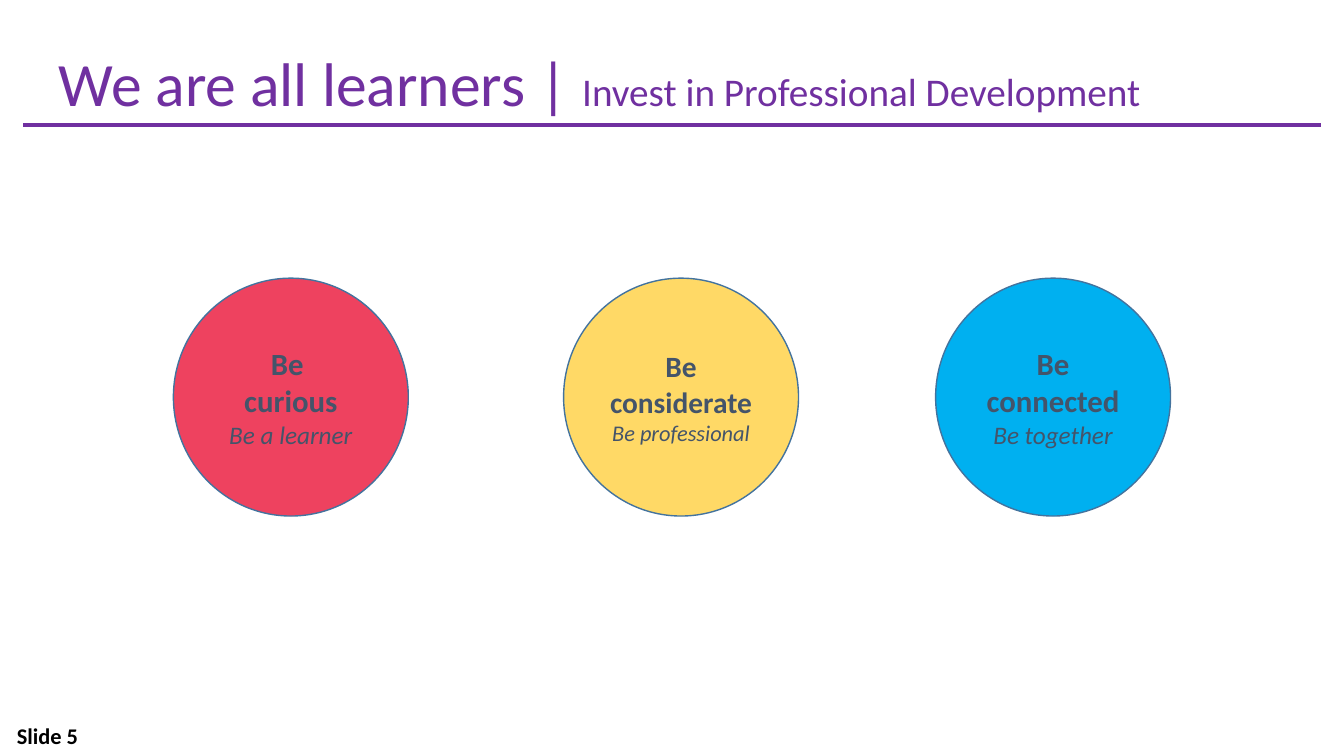
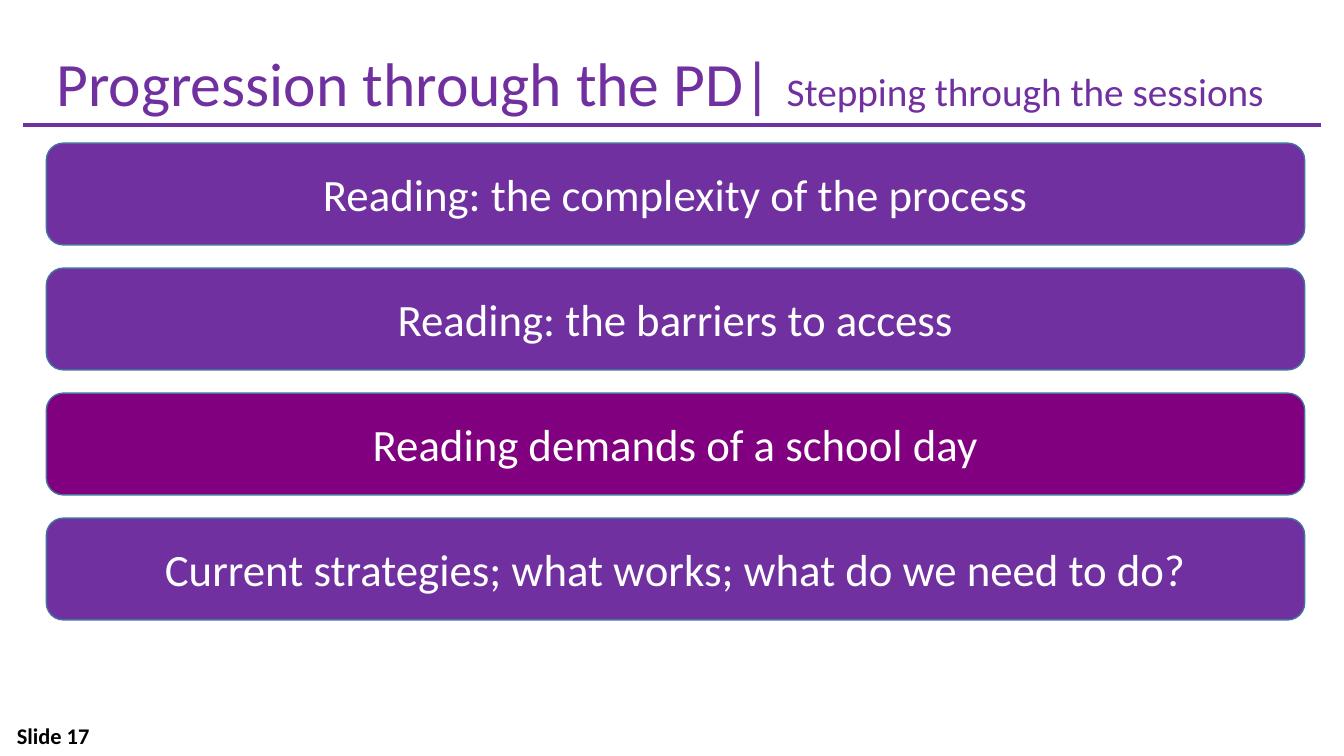
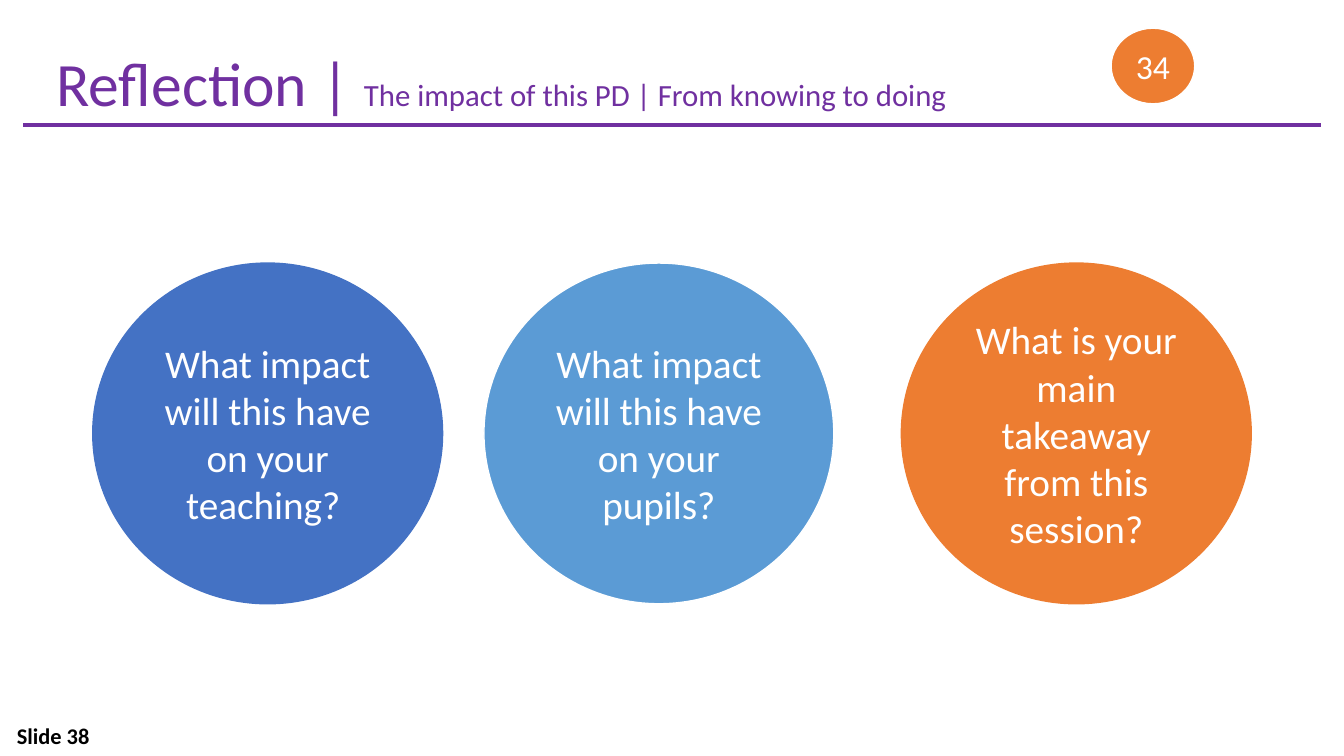
"""Build three professional development slides."""
from pptx import Presentation
from pptx.dml.color import RGBColor
from pptx.enum.shapes import MSO_CONNECTOR, MSO_SHAPE as SHAPE
from pptx.enum.text import MSO_ANCHOR as ANCHOR, MSO_AUTO_SIZE as AUTO_SIZE, PP_ALIGN as ALIGN
from pptx.oxml.ns import qn
from pptx.util import Inches, Pt
from lxml.etree import SubElement

FONT = "Calibri"
COLORS = {
    "purple": "7030A0", "plum": "800080", "red": "EE425F", "yellow": "FFD966",
    "cyan": "00B0F0", "slate": "44546A", "edge": "43739E", "blue": "4472C4",
    "sky": "5B9BD5", "orange": "ED7D31", "white": "FFFFFF", "black": "000000",
}

HEADERS = [
    {"number": 5, "left": 0.48, "size": 28,
     "title": "We are all learners | ", "subtitle": "Invest in Professional Development"},
    {"number": 17, "left": 0.46, "size": 28,
     "title": "Progression through the PD| ", "subtitle": "Stepping through the sessions"},
    {"number": 38, "left": 0.46, "size": 22,
     "title": "Reflection | ", "subtitle": "The impact of this PD | From knowing to doing"},
]

VALUES = [
    (1.72, "red", ["Be ", "curious"], "Be a learner", 22, 18),
    (5.59, "yellow", ["Be considerate"], "Be professional", 21, 16),
    (9.28, "cyan", ["Be connected"], "Be together", 22, 18),
]
VALUE_TOP, VALUE_SIZE = 2.76, (2.33, 2.36)

SESSIONS = [
    ("Reading: the complexity of the process", "purple"),
    ("Reading: the barriers to access", "purple"),
    ("Reading demands of a school day", "plum"),
    ("Current strategies; what works; what do we need to do?", "purple"),
]
BAR_LEFT, BAR_TOP, BAR_SIZE, BAR_PITCH = 0.46, 1.42, (12.48, 1.01), 1.24

QUESTIONS = [
    (0.92, "blue", "blue", "What impact will this have on your teaching? "),
    (4.8, "sky", "white", "What impact will this have on your pupils?"),
    (8.94, "orange", "orange", "What is your main takeaway from this session?"),
]
QUESTION_TOP, QUESTION_SIZE = 2.61, (3.47, 3.38)


def rgb(name):
    """Return the named colour."""
    return RGBColor.from_string(COLORS[name])


def add_text(para, text, size=32, color="white", bold=False, italic=False, align=ALIGN.CENTER):
    """Append a formatted run to a paragraph."""
    para.alignment = align
    span = para.add_run()
    span.text = text
    font = span.font
    font.name, font.size, font.bold, font.italic = FONT, Pt(size), bold, italic
    font.color.rgb = rgb(color)


def add_panel(page, kind, place, fill, line, lines):
    """Add a filled shape holding (text, format) lines."""
    panel = page.shapes.add_shape(kind, *map(Inches, place))
    panel.shadow.inherit = False
    panel.fill.solid()
    panel.fill.fore_color.rgb = rgb(fill)
    panel.line.color.rgb = rgb(line)
    panel.line.width = Pt(1)
    frame = panel.text_frame
    frame.word_wrap = True
    frame.vertical_anchor = ANCHOR.MIDDLE
    for index, (text, style) in enumerate(lines):
        para = frame.add_paragraph() if index else frame.paragraphs[0]
        add_text(para, text, **style)


def add_page(deck, header):
    """Add a slide with its title, rule and slide number."""
    page = deck.slides.add_slide(deck.slide_layouts[5])
    title = page.shapes.title
    title.left, title.top, title.width, title.height = map(
        Inches, (header["left"], 0.4, 12.41, 0.84))
    frame = title.text_frame
    frame.word_wrap = True
    frame.auto_size = AUTO_SIZE.NONE
    frame.vertical_anchor = ANCHOR.TOP
    for text, size in ((header["title"], 44), (header["subtitle"], header["size"])):
        add_text(frame.paragraphs[0], text, size=size, color="purple", align=ALIGN.LEFT)

    rule = page.shapes.add_connector(
        MSO_CONNECTOR.STRAIGHT, *map(Inches, (0.23, 1.24, 13.1, 1.24)))
    rule.line.color.rgb = rgb("purple")
    rule.line.width = Pt(3)
    SubElement(rule._element.spPr, qn("a:effectLst"))

    footer = page.shapes.add_textbox(*map(Inches, (0.07, 7.1, 3, 0.4))).text_frame
    footer.word_wrap = True
    footer.vertical_anchor = ANCHOR.MIDDLE
    add_text(footer.paragraphs[0], f"Slide {header['number']}",
             size=16, color="black", bold=True, align=ALIGN.LEFT)
    return page


def main():
    """Build and save the deck."""
    deck = Presentation()
    deck.slide_width, deck.slide_height = Inches(13.33), Inches(7.5)
    learners, progression, reflection = [add_page(deck, header) for header in HEADERS]

    for left, fill, heading, detail, size, detail_size in VALUES:
        lines = [(text, {"size": size, "color": "slate", "bold": True}) for text in heading]
        lines.append((detail, {"size": detail_size, "color": "slate", "italic": True}))
        add_panel(learners, SHAPE.OVAL, (left, VALUE_TOP, *VALUE_SIZE), fill, "edge", lines)

    for row, (text, fill) in enumerate(SESSIONS):
        place = (BAR_LEFT, BAR_TOP + row * BAR_PITCH, *BAR_SIZE)
        add_panel(progression, SHAPE.ROUNDED_RECTANGLE, place, fill, "edge", [(text, {})])

    add_panel(reflection, SHAPE.OVAL, (11.02, 0.28, 0.83, 0.75), "orange", "white",
              [("34", {"size": 24})])
    for left, fill, line, text in QUESTIONS:
        add_panel(reflection, SHAPE.OVAL, (left, QUESTION_TOP, *QUESTION_SIZE), fill, line,
                  [(text, {"size": 28})])

    deck.save("out.pptx")


if __name__ == "__main__":
    main()
